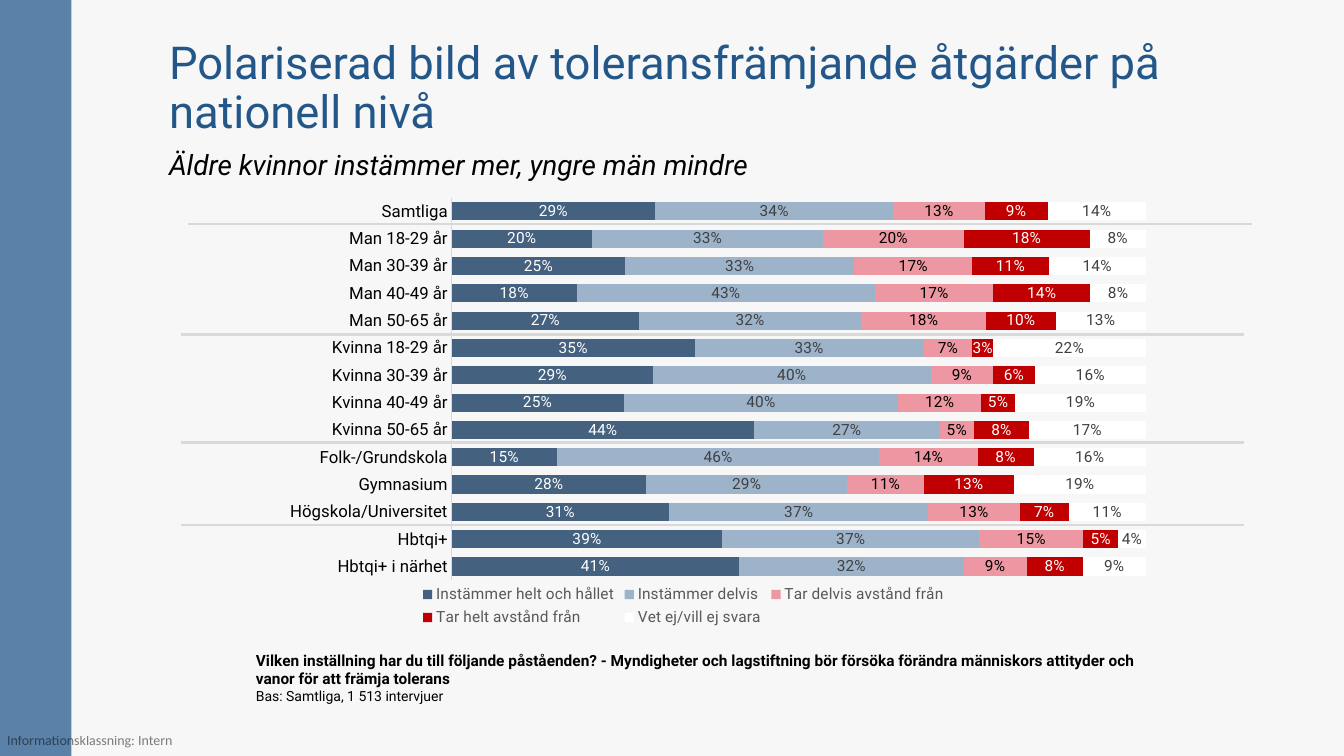
from lxml import etree
from pptx import Presentation
from pptx import util as u
from pptx.chart.data import CategoryChartData
from pptx.dml.color import RGBColor
from pptx.enum import chart as ch, shapes, text
from pptx.oxml.ns import qn

FONT = "Roboto"
COLORS = {
    "back": "F7F7F7", "band": "5A81A7", "title": "235789", "black": "000000",
    "rule": "D9D9D9", "legend": "595959", "dark": "404040", "white": "FFFFFF",
    "navy": "44627F", "sky": "9CB3CA", "pink": "EC97A1", "red": "C00000",
}
TITLE = "Polariserad bild av toleransfrämjande åtgärder på nationell nivå"
SUB = "Äldre kvinnor instämmer mer, yngre män mindre"
ASK = ("Vilken inställning har du till följande påståenden? - Myndigheter och "
       "lagstiftning bör försöka förändra människors attityder och vanor för "
       "att främja tolerans")
BASE = "Bas: Samtliga, 1 513 intervjuer"
TAG = "Informationsklassning: Intern"

# series name, bar colour, label colour
SERIES = [
    ("Instämmer helt och hållet", "navy", "white"),
    ("Instämmer delvis", "sky", "dark"),
    ("Tar delvis avstånd från", "pink", "black"),
    ("Tar helt avstånd från", "red", "white"),
    ("Vet ej/vill ej svara", "white", "dark"),
]
# percentages per group, from the top row down
ROWS = [
    ("Samtliga", 29, 34, 13, 9, 14),
    ("Man 18-29 år", 20, 33, 20, 18, 8),
    ("Man 30-39 år", 25, 33, 17, 11, 14),
    ("Man 40-49 år", 18, 43, 17, 14, 8),
    ("Man 50-65 år", 27, 32, 18, 10, 13),
    ("Kvinna 18-29 år", 35, 33, 7, 3, 22),
    ("Kvinna 30-39 år", 29, 40, 9, 6, 16),
    ("Kvinna 40-49 år", 25, 40, 12, 5, 19),
    ("Kvinna 50-65 år", 44, 27, 5, 8, 17),
    ("Folk-/Grundskola", 15, 46, 14, 8, 16),
    ("Gymnasium", 28, 29, 11, 13, 19),
    ("Högskola/Universitet", 31, 37, 13, 7, 11),
    ("Hbtqi+", 39, 37, 15, 5, 4),
    ("Hbtqi+ i närhet", 41, 32, 9, 8, 9),
]
PLOT = {"x": 0.257, "y": 0.034, "w": 0.728, "h": 0.853}
# left end and height of each rule between groups
RULES = [(4.75, 5.64), (4.57, 8.43), (4.57, 11.15), (4.57, 13.23)]
RULE_W = 26.79


def rgb(name):
    return RGBColor.from_string(COLORS[name])


def style(font, size, color, face=FONT):
    font.size, font.name = u.Pt(size), face
    font.color.rgb = rgb(color)


def add_box(slide, x, y, w, h, inset=True):
    """Add a wrapping text box and return its frame."""
    frame = slide.shapes.add_textbox(u.Cm(x), u.Cm(y), u.Cm(w), u.Cm(h)).text_frame
    frame.word_wrap = True
    if not inset:
        frame.margin_left = frame.margin_right = 0
        frame.margin_top = frame.margin_bottom = 0
    return frame


def add_run(para, words, size, color="black", face=FONT):
    run = para.add_run()
    run.text = words
    style(run.font, size, color, face)
    return run


def add_band(slide):
    band = slide.shapes.add_shape(
        shapes.MSO_SHAPE.RECTANGLE, 0, 0, u.Cm(1.8), u.Cm(19.05))
    band.shadow.inherit = False
    band.fill.solid()
    band.fill.fore_color.rgb = rgb("band")
    band.line.fill.background()


def add_texts(slide):
    para = add_box(slide, 0.18, 18.44, 4.27, 0.43, inset=False).paragraphs[0]
    run = add_run(para, TAG, 10, face="Calibri")
    tint = run.font.fill._xPr.find(".//" + qn("a:srgbClr"))
    etree.SubElement(tint, qn("a:alpha"), val="50000")

    frame = add_box(slide, 4.01, 1.02, 27.53, 2.44)
    frame.vertical_anchor = text.MSO_ANCHOR.MIDDLE
    frame.paragraphs[0].line_spacing = 0.9
    add_run(frame.paragraphs[0], TITLE, 32.4, "title")

    para = add_box(slide, 4.01, 3.58, 27.53, 1.02).paragraphs[0]
    add_run(para, SUB, 20).font.italic = True

    para = add_box(slide, 6.2, 16.28, 22.78, 1.75).paragraphs[0]
    add_run(para, ASK, 11).font.bold = True
    para.add_line_break()
    add_run(para, BASE, 10)


def set_plot(chart):
    """Fix the inner plot area as shares of the chart."""
    area = chart._chartSpace.chart.plotArea
    old = area.find(qn("c:layout"))
    if old is not None:
        area.remove(old)
    layout = etree.Element(qn("c:layout"))
    area.insert(0, layout)
    manual = etree.SubElement(layout, qn("c:manualLayout"))
    parts = [("layoutTarget", "inner"), ("xMode", "edge"), ("yMode", "edge")]
    for key, val in parts + list(PLOT.items()):
        etree.SubElement(manual, qn("c:" + key), val=str(val))


def add_bars(slide):
    rows = ROWS[::-1]
    data = CategoryChartData(number_format="0%")
    data.categories = [row[0] for row in rows]
    for col, (name, _, _) in enumerate(SERIES, 1):
        data.add_series(name, [row[col] / 100 for row in rows])
    chart = slide.shapes.add_chart(
        ch.XL_CHART_TYPE.BAR_STACKED_100, u.Cm(5.21), u.Cm(4.6),
        u.Cm(24.03), u.Cm(11.3), data).chart
    style(chart.font, 10, "black")
    chart.has_title = False
    set_plot(chart)

    plot = chart.plots[0]
    plot.gap_width, plot.overlap, plot.vary_by_categories = 50, 100, False
    for bar, (_, fill, ink) in zip(plot.series, SERIES):
        bar.format.fill.solid()
        bar.format.fill.fore_color.rgb = rgb(fill)
        labels = bar.data_labels
        labels.show_value = True
        labels.position = ch.XL_LABEL_POSITION.CENTER
        labels.number_format, labels.number_format_is_linked = "0%", False
        style(labels.font, 11, ink)

    cats = chart.category_axis
    cats.major_tick_mark = cats.minor_tick_mark = ch.XL_TICK_MARK.NONE
    cats.format.line.color.rgb = rgb("rule")
    cats.format.line.width = u.Pt(0.75)
    style(cats.tick_labels.font, 12, "black")
    vals = chart.value_axis
    vals.visible = vals.has_major_gridlines = False
    vals.minimum_scale, vals.maximum_scale = 0, 1

    chart.has_legend = True
    chart.legend.position = ch.XL_LEGEND_POSITION.BOTTOM
    chart.legend.include_in_layout = False
    style(chart.legend.font, 11, "legend")


def add_rules(slide):
    for x, y in RULES:
        rule = slide.shapes.add_connector(
            shapes.MSO_CONNECTOR.STRAIGHT,
            u.Cm(x), u.Cm(y), u.Cm(x + RULE_W), u.Cm(y))
        rule.line.color.rgb = rgb("rule")
        rule.line.width = u.Pt(1.5)
        etree.SubElement(rule._element.spPr, qn("a:effectLst"))


def main():
    deck = Presentation()
    deck.slide_width, deck.slide_height = u.Cm(33.87), u.Cm(19.05)
    slide = deck.slides.add_slide(deck.slide_layouts[6])
    slide.background.fill.solid()
    slide.background.fill.fore_color.rgb = rgb("back")
    add_band(slide)
    add_texts(slide)
    add_bars(slide)
    add_rules(slide)
    deck.save("out.pptx")


if __name__ == "__main__":
    main()
